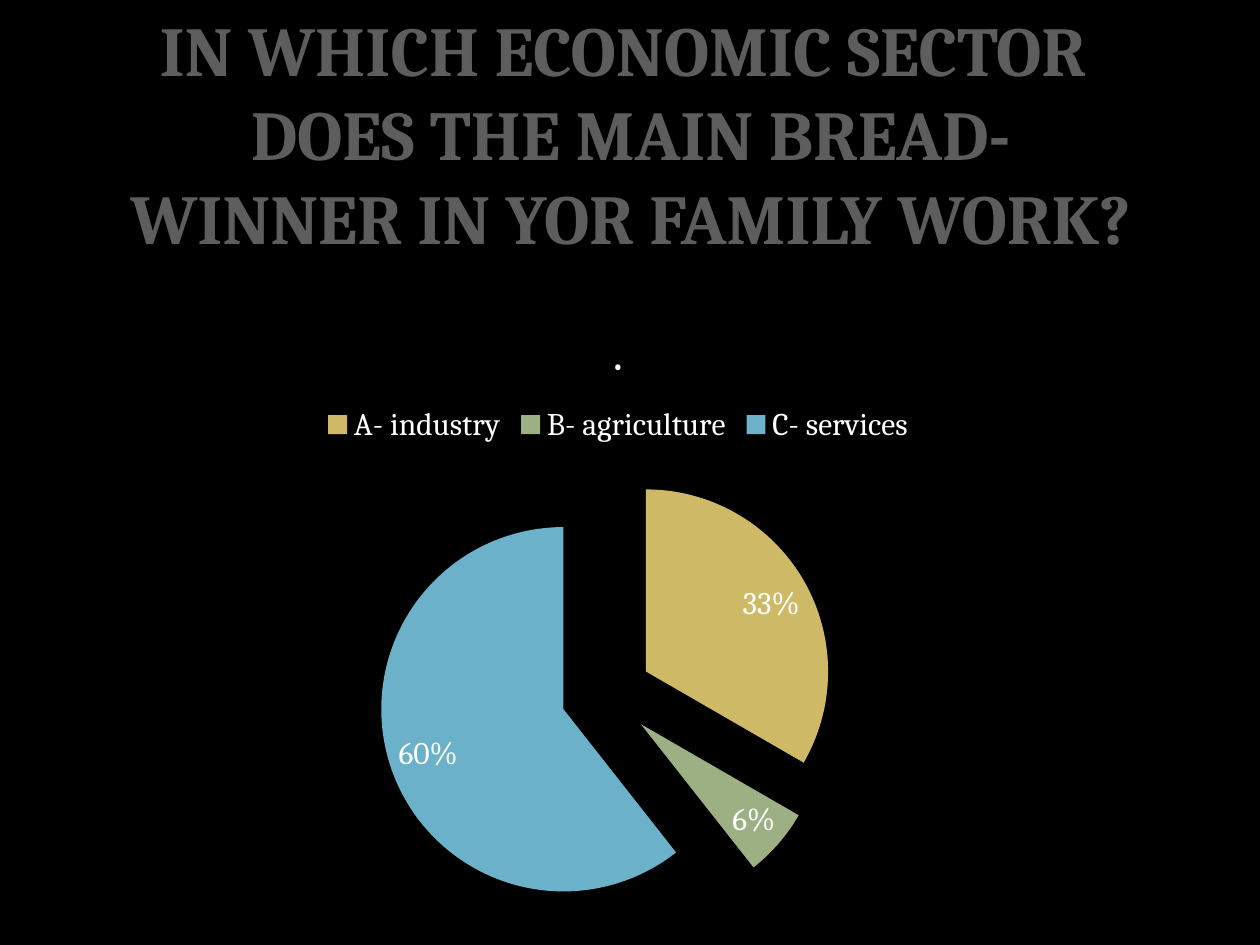
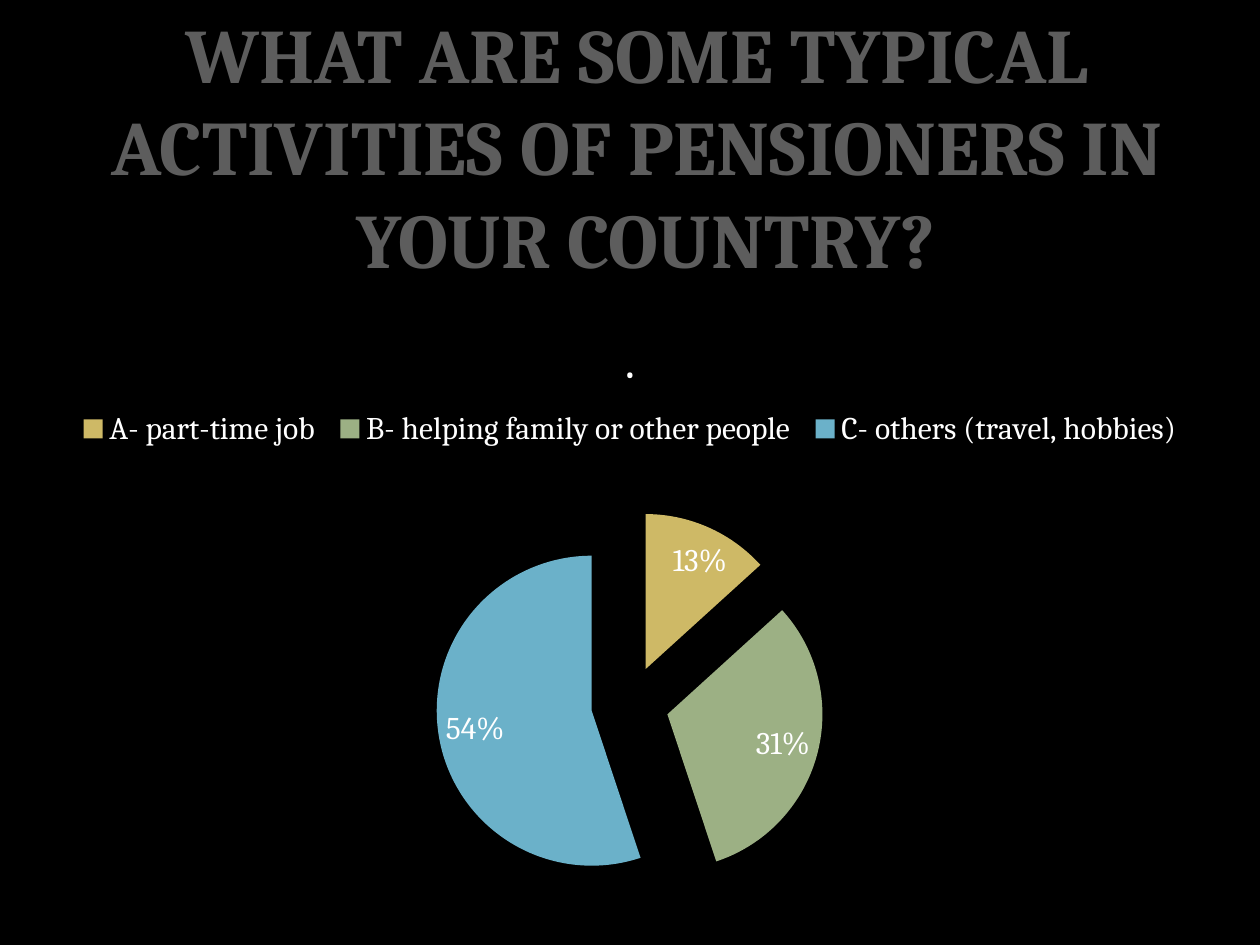
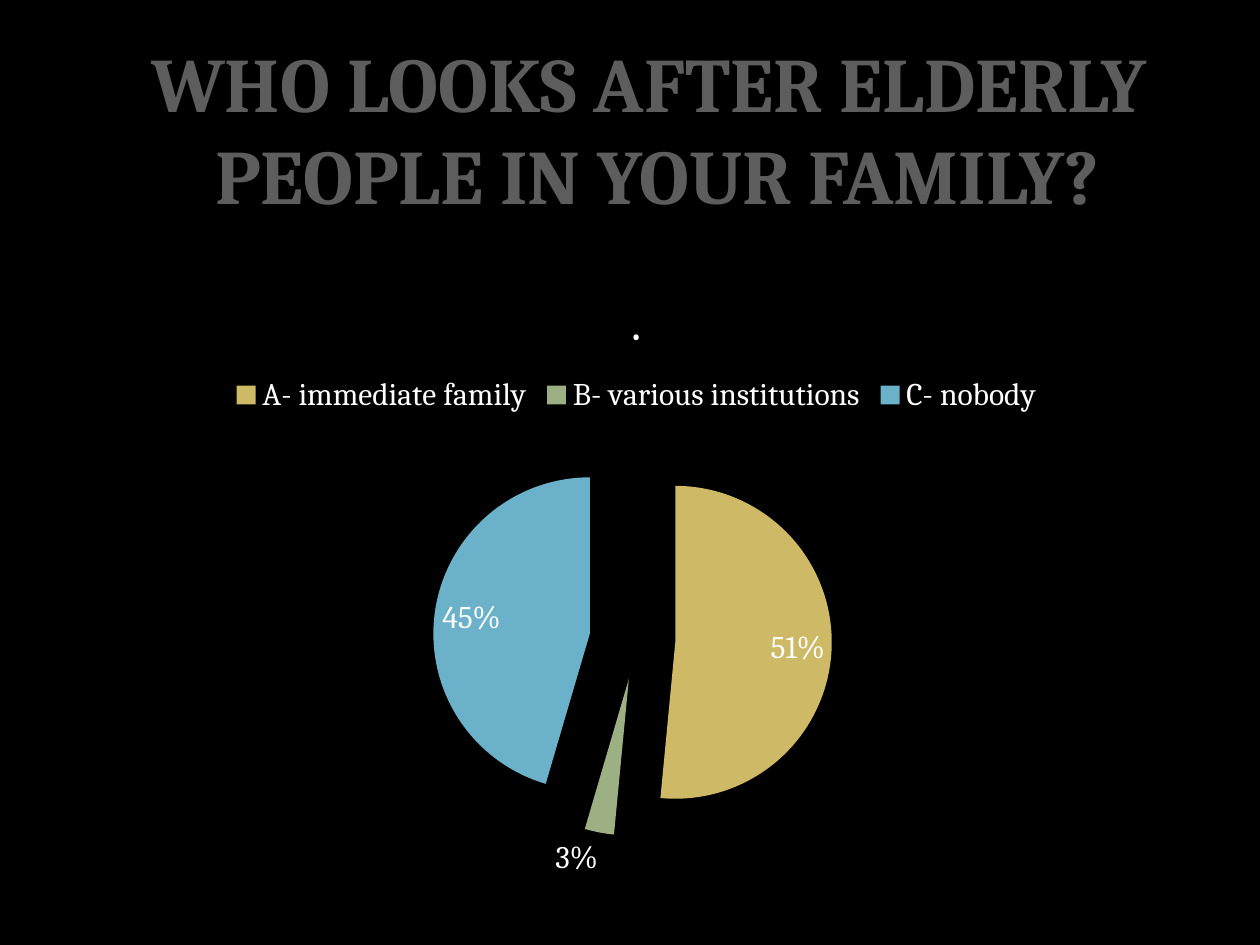
from lxml.etree import SubElement
from pptx import Presentation
from pptx.chart.data import CategoryChartData
from pptx.dml.color import RGBColor
from pptx.enum.chart import XL_CHART_TYPE, XL_LABEL_POSITION, XL_LEGEND_POSITION
from pptx.enum.text import MSO_ANCHOR, MSO_AUTO_SIZE, PP_ALIGN
from pptx.oxml.ns import qn
from pptx.util import Inches, Pt


def color(hex_code):
    """Turn a hex string into a colour."""
    return RGBColor.from_string(hex_code)


class Deck:
    """Hold the survey style and the current slide."""

    FONT = "Cambria"
    BACKGROUND = "000000"
    TITLE = "5D5D5D"
    TEXT = "FFFFFF"
    SLICES = ("CEB966", "9CB084", "6BB1C9")

    def __init__(self):
        """Set up the slide size and the shared background."""
        self.prs = Presentation()
        self.prs.slide_width = Inches(10)
        self.prs.slide_height = Inches(7.5)
        fill = self.prs.slide_master.background.fill
        fill.solid()
        fill.fore_color.rgb = color(self.BACKGROUND)

    def new_slide(self):
        """Start a slide that has only a title."""
        self.s = self.prs.slides.add_slide(self.prs.slide_layouts[5])

    def box(self, x, y, w, h):
        """Convert shares of the slide into lengths."""
        width, height = self.prs.slide_width, self.prs.slide_height
        return int(x * width), int(y * height), int(w * width), int(h * height)

    def style(self, font, size, hex_code, bold=False):
        """Apply the deck's typeface with a size and a colour."""
        font.name = self.FONT
        font.size = Pt(size)
        font.bold = bold
        font.color.rgb = color(hex_code)

    def title(self, text, area, size):
        """Fill and place the question in the title placeholder."""
        sp = self.s.shapes.title
        sp.left, sp.top, sp.width, sp.height = self.box(*area)
        tf = sp.text_frame
        tf.text = text
        tf.word_wrap = True
        tf.auto_size = MSO_AUTO_SIZE.NONE
        tf.vertical_anchor = MSO_ANCHOR.TOP
        for p in tf.paragraphs:
            p.alignment = PP_ALIGN.CENTER
            for r in p.runs:
                self.style(r.font, size, self.TITLE, bold=True)

    def legend(self, chart, area=None):
        """Put the legend on top, or in an area given as shares of the chart."""
        chart.has_legend = True
        legend = chart.legend
        legend.position = XL_LEGEND_POSITION.TOP
        legend.include_in_layout = False
        if area:
            layout = legend._element.get_or_add_layout()
            manual = SubElement(layout, qn("c:manualLayout"))
            for tag in ("xMode", "yMode"):
                SubElement(manual, qn(f"c:{tag}"), val="edge")
            for tag, share in zip("xywh", area):
                SubElement(manual, qn(f"c:{tag}"), val=str(share))

    def pie(self, answers, area, explosions, legend_area):
        """Draw the answers as an exploded pie."""
        data = CategoryChartData(number_format="0%")
        data.categories = list(answers)
        data.add_series(".", list(answers.values()))
        chart = self.s.shapes.add_chart(
            XL_CHART_TYPE.PIE, *self.box(*area), data).chart
        self.style(chart.font, 18, self.TEXT)

        tf = chart.chart_title.text_frame
        tf.text = "."
        self.style(tf.paragraphs[0].runs[0].font, 21.6, self.TEXT, bold=True)
        self.legend(chart, legend_area)

        plot = chart.plots[0]
        plot.vary_by_categories = True
        plot.has_data_labels = True
        labels = plot.data_labels
        labels.show_value = True
        labels.show_percentage = False
        labels.number_format = "0%"
        labels.number_format_is_linked = False
        labels.position = XL_LABEL_POSITION.BEST_FIT
        self.style(labels.font, 18, self.TEXT)

        series = plot.series[0]
        for i, (hex_code, percent) in enumerate(zip(self.SLICES, explosions)):
            fill = series.points[i].format.fill
            fill.solid()
            fill.fore_color.rgb = color(hex_code)
            dpt = series._element.findall(qn("c:dPt"))[i]
            explosion = SubElement(dpt, qn("c:explosion"), val=str(percent))
            dpt.find(qn("c:spPr")).addprevious(explosion)


QUESTIONS = [
    ("IN WHICH ECONOMIC SECTOR \nDOES THE MAIN BREAD-\nWINNER IN YOR FAMILY WORK?",
     40, (-0.023, 0, 1.047, 0.283),
     {"A- industry": 0.33, "B- agriculture": 0.06, "C- services": 0.6},
     (0.031, 0.323, 0.919, 0.677), (25, 25, 25), None),
    ("WHAT ARE SOME TYPICAL \nACTIVITIES OF PENSIONERS IN \nYOUR COUNTRY?",
     44, (0, 0, 1.025, 0.309),
     {"A- part-time job": 0.13, "B- helping family or other people": 0.31,
      "C- others (travel, hobbies)": 0.54},
     (0.05, 0.333, 0.9, 0.636), (25, 25, 25), (0.005, 0.15, 0.99, 0.08)),
    ("WHO LOOKS AFTER ELDERLY \nPEOPLE IN YOUR FAMILY?",
     44, (0.039, 0.031, 0.966, 0.211),
     {"A- immediate family": 0.51, "B- various institutions": 0.03, "C- nobody": 0.45},
     (0.055, 0.292, 0.9, 0.66), (25, 25, 30), None),
]


def main():
    """Build one slide per survey question."""
    deck = Deck()
    for question, size, title_area, answers, *pie_layout in QUESTIONS:
        deck.new_slide()
        deck.title(question, title_area, size)
        deck.pie(answers, *pie_layout)
    deck.prs.save("out.pptx")


if __name__ == "__main__":
    main()
